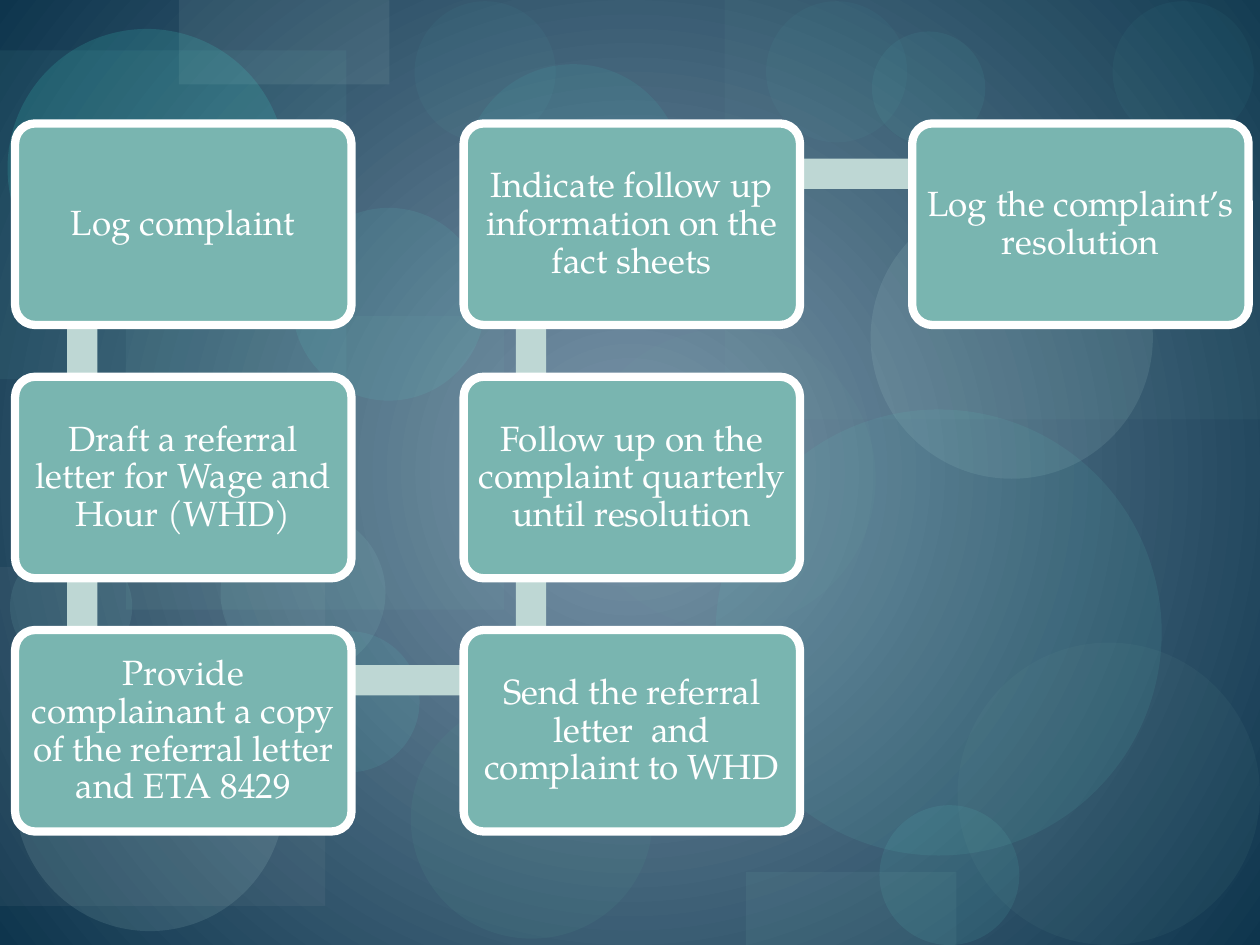
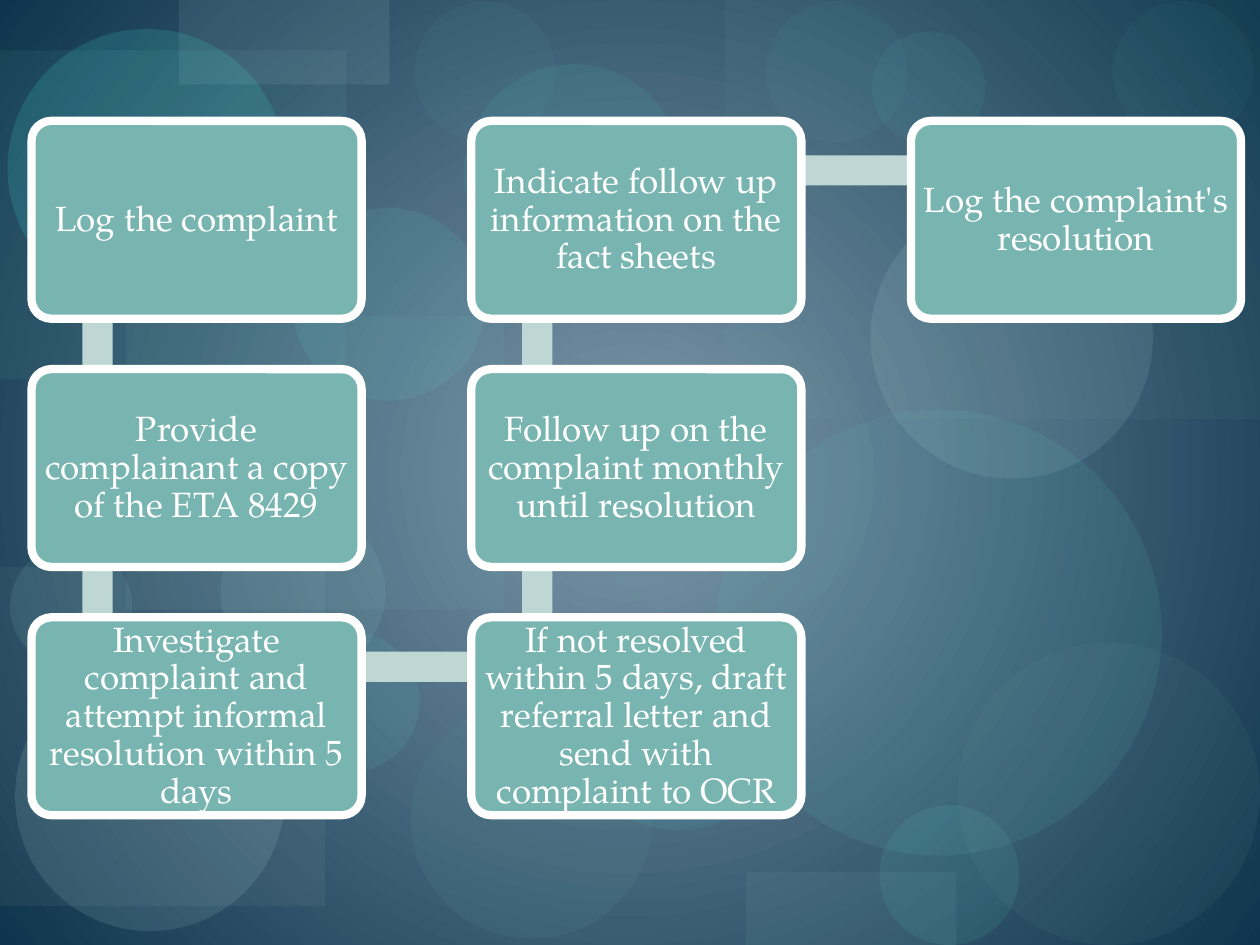
from dataclasses import dataclass

from lxml.etree import SubElement
from pptx import Presentation
from pptx.dml.color import RGBColor
from pptx.enum.shapes import MSO_SHAPE
from pptx.enum.text import MSO_ANCHOR, PP_ALIGN
from pptx.oxml.ns import qn
from pptx.util import Inches, Pt


@dataclass(frozen=True)
class Theme:
    """Colours, type and line sizes of the deck."""

    glow: str = "7B96AA"
    night: str = "0E354D"
    box: str = "79B5B0"
    link: str = "BED7D4"
    white: str = "FFFFFF"
    font: str = "TeX Gyre Pagella"
    step_size: float = 20
    line_spacing: float = 0.9
    outline: float = 4.72
    link_thickness: float = 0.24


@dataclass(frozen=True)
class Grid:
    """Place of the first step box, box size and distance between boxes."""

    left: float
    top: float
    width: float
    height: float
    column_pitch: float
    row_pitch: float
    rows: int = 3

    def corner(self, index):
        """Return the top left corner of a step on the winding route."""
        column, row = divmod(index, self.rows)
        if column % 2:
            row = self.rows - 1 - row
        return self.left + column * self.column_pitch, self.top + row * self.row_pitch

    def anchor(self, index):
        """Return the point in a step box where its links meet."""
        left, top = self.corner(index)
        return left + 0.2 * self.width, top + 0.25 * self.height


THEME = Theme()
RECTANGLE = MSO_SHAPE.RECTANGLE
OVAL = MSO_SHAPE.OVAL

BACKDROP = [
    (RECTANGLE, 1, 2.51, 3, 2.33, "79B5B0", 9),
    (OVAL, 3.26, 5.55, 1.92, 1.9, "549791", 13),
    (RECTANGLE, 5.75, 0, 4.25, 3.33, "79B5B0", 6),
    (RECTANGLE, 0, 4.5, 2.58, 2.69, "B2B7BA", 8),
    (OVAL, 4.57, 2.61, 2.38, 2.38, "70A39E", 8),
    (OVAL, 6.98, 6.39, 1.11, 1.11, "65E8DC", 9),
    (OVAL, 6.91, 1.56, 2.24, 2.24, "C1E8E4", 11),
    (OVAL, 0.12, 5.25, 2.14, 2.14, "C1E8E4", 12),
    (OVAL, 2.21, 5.01, 1.12, 1.12, "65E8DC", 9),
    (OVAL, 4.56, 5.06, 1.66, 1.53, "44EADC", 8),
    (RECTANGLE, 0, 0.4, 2.75, 2.61, "77D6CE", 7),
    (RECTANGLE, 1.42, 0, 1.67, 0.67, "BED7D4", 10),
    (OVAL, 0.06, 0.23, 2.21, 2.21, "44EADC", 15),
    (OVAL, 0.08, 4.33, 0.97, 0.97, "97DCD6", 10),
    (OVAL, 2.32, 1.65, 1.53, 1.53, "65E8DC", 9),
    (OVAL, 3.68, 0.51, 1.74, 1.74, "44EADC", 8),
    (OVAL, 5.68, 3.25, 3.54, 3.54, "61CDC4", 10),
    (OVAL, 6.08, 0.01, 1.12, 1.12, "65E8DC", 4),
    (OVAL, 7.6, 5.1, 2.4, 2.4, "70A39E", 8),
    (OVAL, 1.75, 4.05, 1.31, 1.31, "97DCD6", 10),
    (OVAL, 6.92, 0.25, 0.9, 0.9, "65E8DC", 6),
    (OVAL, 8.83, 0.01, 1.12, 1.12, "65E8DC", 4),
    (RECTANGLE, 5.92, 6.92, 1.67, 0.58, "79B5B0", 10),
    (OVAL, 3.29, 0.01, 1.12, 1.12, "65E8DC", 4),
]

WAGE_GRID = Grid(0.12, 0.98, 2.67, 1.6, 3.56, 2.01)
WAGE_STEPS = [
    "Log complaint",
    "Draft a referral letter for Wage and Hour (WHD)",
    "Provide complainant a copy of the referral letter and ETA 8429",
    "Send the referral letter  and complaint to WHD",
    "Follow up on the complaint quarterly until resolution",
    "Indicate follow up information on the fact sheets",
    "Log the complaint’s resolution",
]

RIGHTS_GRID = Grid(0.25, 0.96, 2.62, 1.57, 3.49, 1.97)
RIGHTS_STEPS = [
    "Log the complaint",
    "Provide complainant a copy of the ETA 8429",
    "Investigate complaint and attempt informal resolution within 5 days",
    "If not resolved within 5 days, draft referral letter and send with complaint to OCR",
    "Follow up on the complaint monthly until resolution",
    "Indicate follow up information on the fact sheets",
    "Log the complaint's resolution",
]


def add_plain_shape(slide, kind, left, top, width, height, color, opacity=100):
    """Add a flat shape without outline or shadow."""
    shape = slide.shapes.add_shape(
        kind, Inches(left), Inches(top), Inches(width), Inches(height)
    )
    shape.shadow.inherit = False
    shape.line.fill.background()
    shape.fill.solid()
    shape.fill.fore_color.rgb = RGBColor.from_string(color)
    if opacity < 100:
        color_element = shape.element.spPr.find(".//" + qn("a:srgbClr"))
        SubElement(color_element, qn("a:alpha"), val=str(opacity * 1000))
    return shape


def write_text(shape, text, *, size, color, font=THEME.font, align=PP_ALIGN.CENTER,
               anchor=MSO_ANCHOR.MIDDLE, spacing=THEME.line_spacing, side=0.03, edge=0.03):
    """Write one formatted paragraph into a shape."""
    frame = shape.text_frame
    frame.word_wrap = True
    frame.vertical_anchor = anchor
    frame.margin_left = frame.margin_right = Inches(side)
    frame.margin_top = frame.margin_bottom = Inches(edge)
    paragraph = frame.paragraphs[0]
    paragraph.alignment = align
    paragraph.line_spacing = spacing
    run = paragraph.add_run()
    run.text = text
    run.font.name = font
    run.font.size = Pt(size)
    run.font.color.rgb = RGBColor.from_string(color)


def paint_background(master):
    """Give the master a round gradient that glows from the centre."""
    fill = master.background.fill
    fill.gradient()
    for stop, color in zip(fill.gradient_stops, (THEME.glow, THEME.night)):
        stop.color.rgb = RGBColor.from_string(color)
    for stop, position in zip(fill.gradient_stops, (0, 1)):
        stop.position = position
    gradient = master.element.find(".//" + qn("a:gradFill"))
    gradient.remove(gradient.find(qn("a:lin")))
    circle = SubElement(gradient, qn("a:path"), path="circle")
    SubElement(circle, qn("a:fillToRect"), l="50000", t="50000", r="50000", b="50000")


def add_backdrop(master, slide):
    """Draw the faint discs and panels and hand them to the master."""
    for item in BACKDROP:
        shape = add_plain_shape(slide, *item)
        master.shapes.element.append(shape.element)


def add_link(slide, start, end):
    """Add the bar that joins the anchors of two steps."""
    (left, right), (top, bottom) = (sorted(pair) for pair in zip(start, end))
    thickness = THEME.link_thickness
    if right - left > bottom - top:
        place = left, top - thickness / 2, right - left, thickness
    else:
        place = left - thickness / 2, top, thickness, bottom - top
    add_plain_shape(slide, RECTANGLE, *place, THEME.link)


def add_step(slide, grid, index, text):
    """Add the rounded box of one step."""
    box = add_plain_shape(
        slide, MSO_SHAPE.ROUNDED_RECTANGLE, *grid.corner(index),
        grid.width, grid.height, THEME.box,
    )
    box.adjustments[0] = 0.1
    box.line.color.rgb = RGBColor.from_string(THEME.white)
    box.line.width = Pt(THEME.outline)
    write_text(box, text, size=THEME.step_size, color=THEME.white)


def add_process(slide, grid, steps):
    """Draw the links of a winding process and its steps above them."""
    for index in range(len(steps) - 1):
        add_link(slide, grid.anchor(index), grid.anchor(index + 1))
    for index, text in enumerate(steps):
        add_step(slide, grid, index, text)


def main():
    """Build both process slides and save the deck."""
    presentation = Presentation()
    presentation.slide_width = Inches(10)
    presentation.slide_height = Inches(7.5)
    blank = presentation.slide_layouts[6]
    wage_slide = presentation.slides.add_slide(blank)
    rights_slide = presentation.slides.add_slide(blank)
    paint_background(presentation.slide_master)
    add_backdrop(presentation.slide_master, wage_slide)
    add_process(wage_slide, WAGE_GRID, WAGE_STEPS)
    add_process(rights_slide, RIGHTS_GRID, RIGHTS_STEPS)
    presentation.save("out.pptx")


if __name__ == "__main__":
    main()
